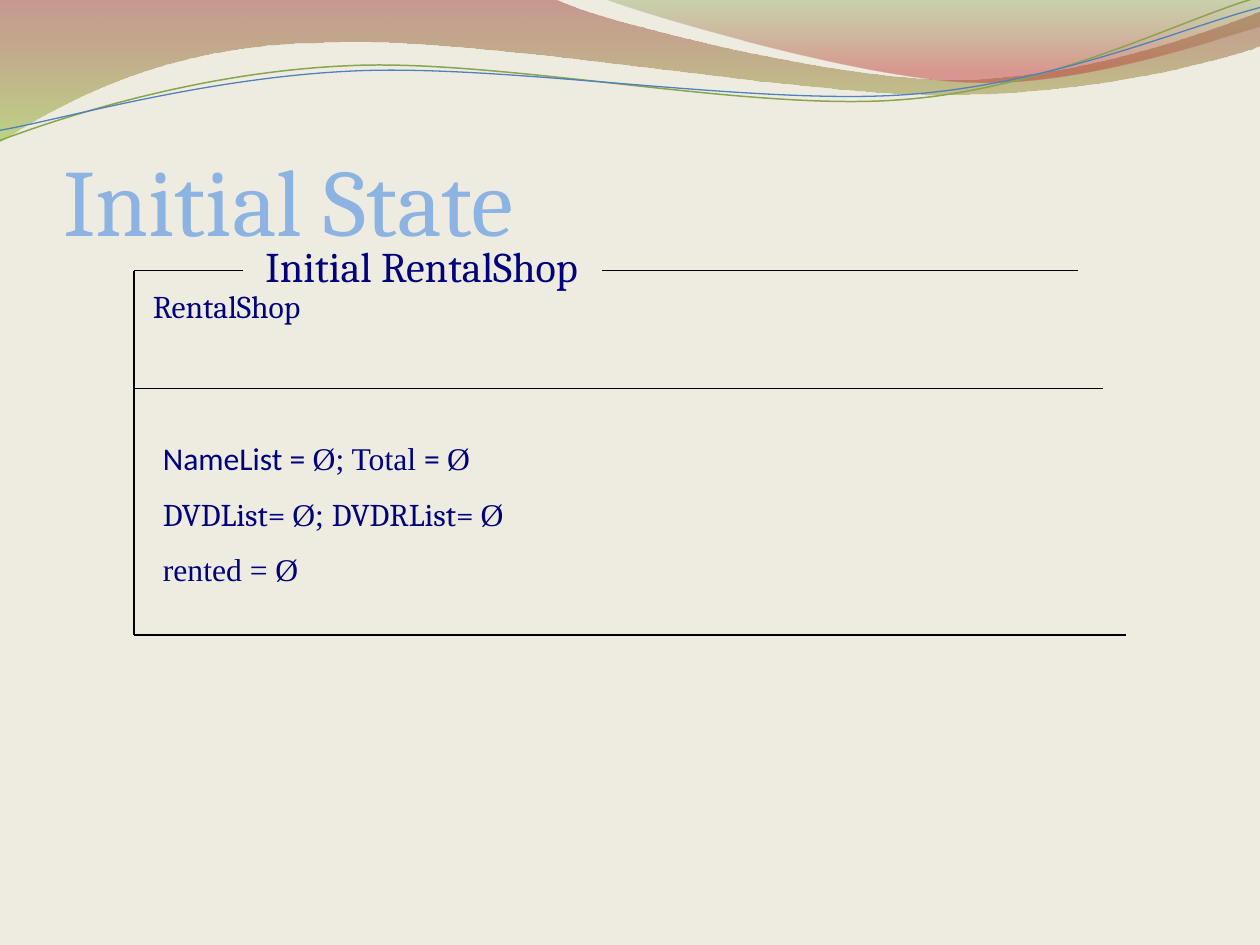
from math import cos, radians, sin

from lxml.etree import SubElement
from pptx import Presentation
from pptx.dml.color import RGBColor
from pptx.enum.shapes import MSO_CONNECTOR
from pptx.enum.text import MSO_ANCHOR
from pptx.oxml.ns import qn
from pptx.util import Inches, Pt

NAVY = "00007F"
SERIF = "Cambria"
SANS = "Calibri"
TIMES = "Times New Roman"
STRAND_TILT = -2.7

BROAD_WAVE = [
    (0, 0), (4.38, -0.01),
    (4.74, 0.17, 6.61, 0.63, 7.55, 0.63),
    (8.5, 0.63, 9.54, 0.26, 9.96, 0.09),
    (9.97, 0.36),
    (9.79, 0.44, 8.66, 0.76, 7.43, 0.75),
    (6.19, 0.75, 3.8, 0.28, 2.56, 0.34),
    (1.29, 0.35, 0.46, 0.83, -0.01, 1.13),
]
CORNER_WAVE = [
    (4.77, -0.01),
    (5.07, 0.11, 6.79, 0.62, 7.66, 0.65),
    (8.52, 0.69, 9.57, 0.32, 9.96, 0.21),
    (9.96, 0),
]
GREEN_STRAND = [
    (0, 1.11),
    (0.48, 0.93, 1.57, 0.57, 2.75, 0.52),
    (3.94, 0.46, 5.9, 0.88, 7.1, 0.79),
    (8.29, 0.71, 9.34, 0.15, 9.94, -0.02),
]
BLUE_STRAND = [
    (0, 1.03),
    (0.47, 0.95, 1.63, 0.61, 2.82, 0.56),
    (4.01, 0.51, 5.95, 0.83, 7.14, 0.75),
    (8.33, 0.67, 9.37, 0.21, 9.96, 0.06),
]


def color(hex_value):
    return RGBColor.from_string(hex_value)


def pairs(segment):
    return list(zip(segment[::2], segment[1::2]))


def bend_curves(outline, segments):
    corners = iter(list(outline._element.spPr.iter(qn("a:lnTo"))))
    for segment in segments[1:]:
        corner = next(corners)
        if len(segment) == 6:
            corner.tag = qn("a:cubicBezTo")
            for follower in (next(corners), next(corners)):
                corner.append(follower[0])
                follower.getparent().remove(follower)


def add_outline(slide, segments, close):
    points = [
        (Inches(x), Inches(y)) for segment in segments for x, y in pairs(segment)
    ]
    builder = slide.shapes.build_freeform(*points[0])
    builder.add_line_segments(points[1:], close=close)
    outline = builder.convert_to_shape()
    bend_curves(outline, segments)
    outline.shadow.inherit = False
    return outline


def add_wave(slide, segments, stops):
    wave = add_outline(slide, segments, close=True)
    wave.line.fill.background()
    wave.fill.gradient()
    wave.fill.gradient_angle = 270
    for stop, (position, hex_value, opacity) in zip(wave.fill.gradient_stops, stops):
        stop.position = position
        stop.color.rgb = color(hex_value)
    tints = wave._element.spPr.iter(qn("a:srgbClr"))
    for tint, (position, hex_value, opacity) in zip(tints, stops):
        SubElement(tint, qn("a:alpha")).set("val", str(opacity * 1000))


def level(segment, center):
    angle = radians(-STRAND_TILT)
    leveled = []
    for x, y in pairs(segment):
        dx, dy = x - center[0], y - center[1]
        leveled += [
            center[0] + dx * cos(angle) - dy * sin(angle),
            center[1] + dx * sin(angle) + dy * cos(angle),
        ]
    return leveled


def add_strand(slide, segments, center, hex_value, width):
    leveled = [level(segment, center) for segment in segments]
    strand = add_outline(slide, leveled, close=False)
    strand.rotation = STRAND_TILT
    strand.fill.background()
    strand.line.color.rgb = color(hex_value)
    strand.line.width = Pt(width)


def add_rule(slide, x1, y1, x2, y2):
    rule = slide.shapes.add_connector(
        MSO_CONNECTOR.STRAIGHT, Inches(x1), Inches(y1), Inches(x2), Inches(y2)
    )
    rule.line.color.rgb = color("000000")
    rule.line.width = Pt(0.75)
    SubElement(rule._element.spPr, qn("a:effectLst"))


def add_text(slide, box, lines, size, hex_value=NAVY, space_after=10):
    frame = slide.shapes.add_textbox(*map(Inches, box)).text_frame
    frame.word_wrap = True
    for index, pieces in enumerate(lines):
        paragraph = frame.add_paragraph() if index else frame.paragraphs[0]
        paragraph.space_after = Pt(space_after)
        paragraph.font.size = Pt(size)
        paragraph.font.color.rgb = color(hex_value)
        if len(pieces) == 1:
            paragraph.font.name = pieces[0][1]
        for words, font_name in pieces:
            run = paragraph.add_run()
            run.text = words
            if len(pieces) > 1:
                run.font.name = font_name
    return frame


def add_title(slide, words):
    title = add_text(
        slide, (0.5, 0.77, 8.96, 1.25), [[(words, SERIF)]], 54, "8DB3E2", 0
    )
    title.vertical_anchor = MSO_ANCHOR.BOTTOM
    title.margin_left = title.margin_right = title.margin_bottom = 0


def add_schema(slide):
    left, top, divider, bottom = 1.06, 2.14, 3.07, 5.02
    add_text(slide, (1.11, 2.22, 4.1, 0.48), [[("RentalShop", SERIF)]], 18)
    add_rule(slide, 4.76, top, 8.52, top)
    add_rule(slide, left, bottom, 8.9, bottom)
    add_rule(slide, left, top, left, bottom)
    add_rule(slide, left, top, 1.92, top)
    add_text(slide, (2, 1.85, 2.98, 0.6), [[("Initial RentalShop", SERIF)]], 24)
    add_rule(slide, left, divider, 8.72, divider)
    predicates = [
        [("NameList = ", SANS), ("Ø; Total ", TIMES), ("= ", SANS), ("Ø", TIMES)],
        [("DVDList= ", SERIF), ("Ø; ", TIMES), ("DVDRList= ", SERIF), ("Ø", TIMES)],
        [("rented = Ø", TIMES)],
    ]
    add_text(slide, (1.19, 3.42, 3.76, 2.18), predicates, 18)


def main():
    presentation = Presentation()
    presentation.slide_width = Inches(9.96)
    presentation.slide_height = Inches(7.47)
    slide = presentation.slides.add_slide(presentation.slide_layouts[6])
    slide.background.fill.solid()
    slide.background.fill.fore_color.rgb = color("EEECE1")

    add_wave(slide, BROAD_WAVE, [(0, "973330", 45), (1, "95C238", 55)])
    add_wave(slide, CORNER_WAVE, [(0, "769537", 30), (0.8, "BE3330", 45)])
    add_strand(slide, GREEN_STRAND, (4.97, 0.58), "89A54F", 0.85)
    add_strand(slide, BLUE_STRAND, (4.98, 0.59), "4F81BD", 0.75)
    add_title(slide, "Initial State")
    add_schema(slide)
    presentation.save("out.pptx")


if __name__ == "__main__":
    main()
